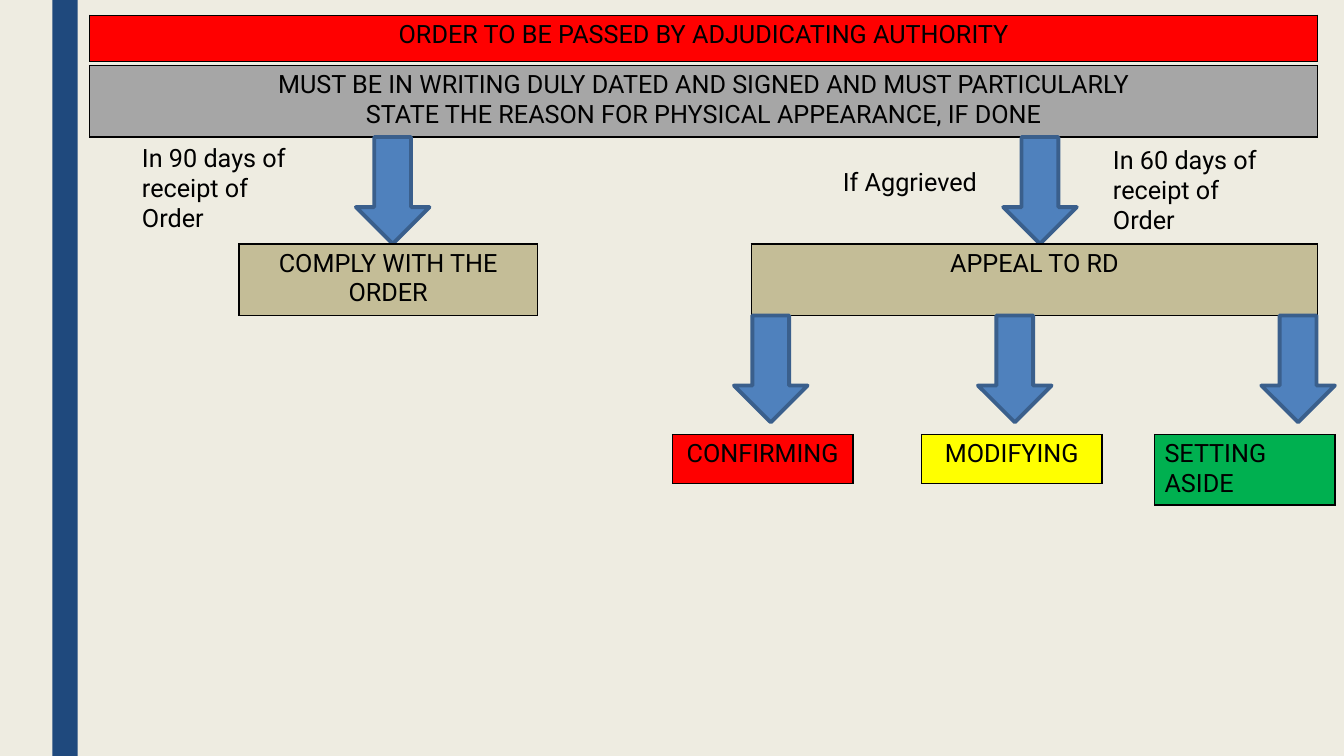
from dataclasses import dataclass
from pptx import Presentation
from pptx.dml.color import RGBColor
from pptx.enum.shapes import MSO_SHAPE as Shape
from pptx.enum.text import MSO_AUTO_SIZE as AutoSize, PP_ALIGN as Align
from pptx.oxml import parse_xml
from pptx.oxml.ns import nsdecls
from pptx.util import Inches, Pt


@dataclass(frozen=True)
class Theme:
    font: str = "Roboto"
    text_size: float = 18
    border_width: float = 1
    arrow_line_width: float = 2.75
    ink: str = "000000"
    background: str = "EEECE1"
    side_band: str = "1F497D"
    arrow: str = "4F81BD"
    arrow_line: str = "3A5F8C"
    red: str = "FF0000"
    grey: str = "A6A6A6"
    tan: str = "C4BD97"
    yellow: str = "FFFF00"
    green: str = "00B050"


class FlowSlide:
    def __init__(self, slide, theme):
        self.slide = slide
        self.theme = theme
        slide.background.fill.solid()
        slide.background.fill.fore_color.rgb = RGBColor.from_string(theme.background)

    def set_text(self, frame, text, align):
        frame.text = text
        frame.word_wrap = True
        for paragraph in frame.paragraphs:
            paragraph.alignment = align
            for run in paragraph.runs:
                run.font.name = self.theme.font
                run.font.size = Pt(self.theme.text_size)
                run.font.color.rgb = RGBColor.from_string(self.theme.ink)

    def shape(self, kind, left, top, width, height, fill):
        shape = self.slide.shapes.add_shape(
            kind, Inches(left), Inches(top), Inches(width), Inches(height))
        shape.shadow.inherit = False
        shape.fill.solid()
        shape.fill.fore_color.rgb = RGBColor.from_string(fill)
        return shape

    def side_band(self):
        band = self.shape(Shape.RECTANGLE, 0.52, 0, 0.25, 7.5, self.theme.side_band)
        band.line.fill.background()

    def down_arrow(self, left, top):
        arrow = self.shape(Shape.DOWN_ARROW, left, top, 0.73, 1.06, self.theme.arrow)
        arrow.line.color.rgb = RGBColor.from_string(self.theme.arrow_line)
        arrow.line.width = Pt(self.theme.arrow_line_width)

    def box(self, text, left, top, width, height, fill, align=Align.CENTER):
        table = self.slide.shapes.add_table(
            1, 1, Inches(left), Inches(top), Inches(width), Inches(height)).table
        table.first_row = table.horz_banding = False
        cell = table.cell(0, 0)
        self.set_text(cell.text_frame, text, align)
        properties = cell._tc.get_or_add_tcPr()
        for side in ("lnL", "lnR", "lnT", "lnB"):
            properties.append(parse_xml(
                f'<a:{side} {nsdecls("a")} w="{Pt(self.theme.border_width)}">'
                f'<a:solidFill><a:srgbClr val="{self.theme.ink}"/></a:solidFill>'
                f'</a:{side}>'))
        cell.fill.solid()
        cell.fill.fore_color.rgb = RGBColor.from_string(fill)

    def label(self, text, left, top, width, height, align=Align.LEFT):
        frame = self.slide.shapes.add_textbox(
            Inches(left), Inches(top), Inches(width), Inches(height)).text_frame
        self.set_text(frame, text, align)
        frame.auto_size = AutoSize.SHAPE_TO_FIT_TEXT


def main():
    deck = Presentation()
    deck.slide_width, deck.slide_height = Inches(13.33), Inches(7.5)
    theme = Theme()
    flow = FlowSlide(deck.slides.add_slide(deck.slide_layouts[6]), theme)

    flow.side_band()
    flow.box("ORDER TO BE PASSED BY ADJUDICATING AUTHORITY",
             0.89, 0.15, 12.18, 0.46, theme.red)
    flow.box("MUST BE IN WRITING DULY DATED AND SIGNED AND MUST PARTICULARLY\n"
             "STATE THE REASON FOR PHYSICAL APPEARANCE, IF DONE",
             0.89, 0.65, 12.18, 0.71, theme.grey)

    for left in (3.53, 9.95):
        flow.down_arrow(left, 1.36)
    flow.box("COMPLY WITH THE ORDER", 2.37, 2.42, 2.96, 0.71, theme.tan)
    flow.box("APPEAL TO RD", 7.45, 2.42, 5.62, 0.71, theme.tan)

    flow.label("If Aggrieved", 8.1, 1.6, 1.85, 0.4, Align.CENTER)
    for days, left, top in ((60, 10.94, 1.38), (90, 1.31, 1.36)):
        flow.label(f"In {days} days of receipt of Order", left, top, 1.79, 1.01)

    for left in (7.28, 9.7, 12.51):
        flow.down_arrow(left, 3.13)
    outcomes = (
        ("CONFIRMING", 6.67, 0.49, theme.red, Align.CENTER),
        ("MODIFYING", 9.14, 0.49, theme.yellow, Align.CENTER),
        ("SETTING ASIDE", 11.45, 0.7, theme.green, Align.LEFT),
    )
    for outcome, left, height, fill, align in outcomes:
        flow.box(outcome, left, 4.31, 1.79, height, fill, align)

    deck.save("out.pptx")


if __name__ == "__main__":
    main()
